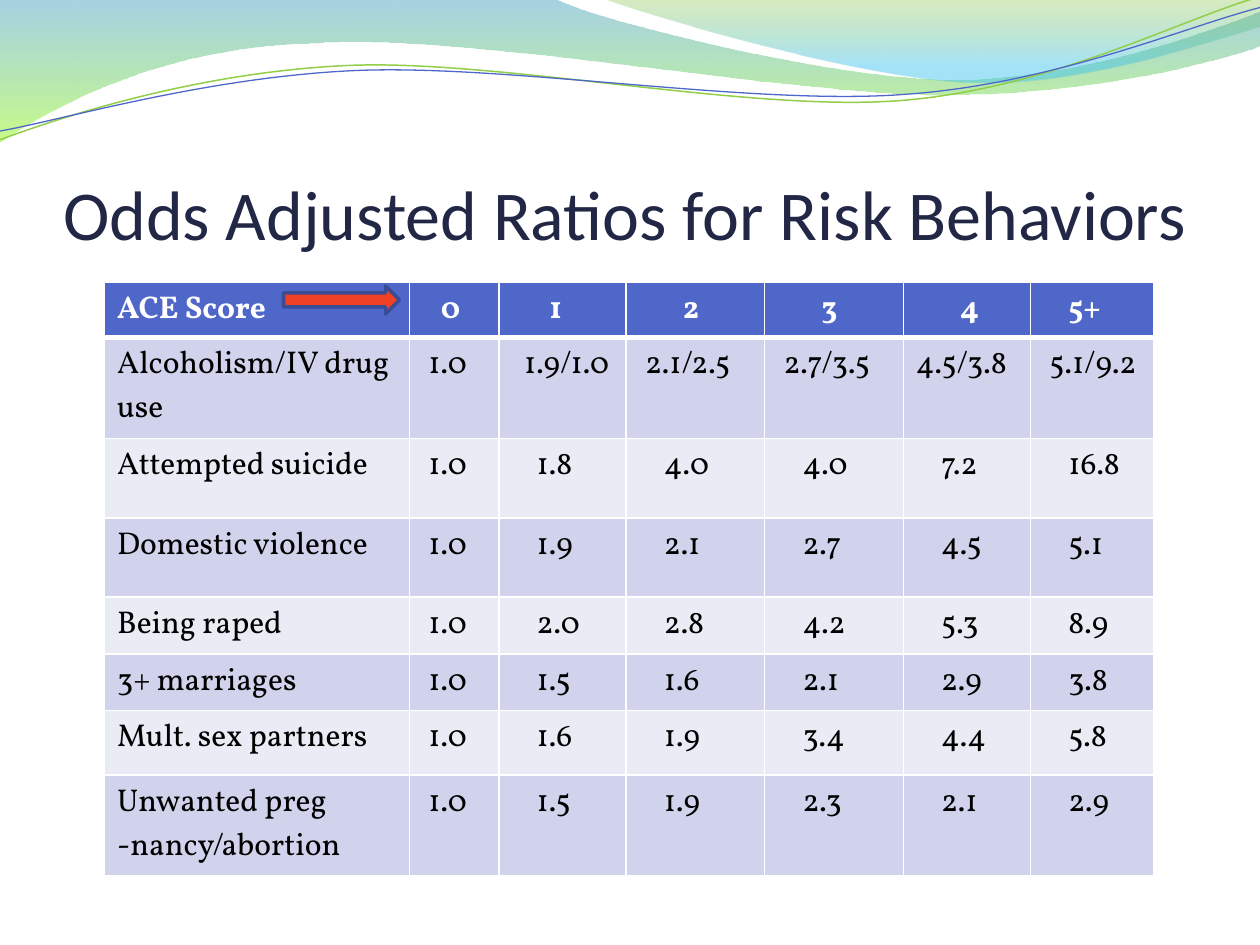
from dataclasses import dataclass

from lxml.etree import SubElement
from pptx import Presentation
from pptx.dml.color import RGBColor
from pptx.enum.shapes import MSO_SHAPE
from pptx.enum.text import MSO_ANCHOR
from pptx.oxml import parse_xml
from pptx.oxml.ns import nsdecls, qn
from pptx.util import Inches, Pt


@dataclass(frozen=True)
class Theme:
    title_font: str = "Calibri"
    table_font: str = "Vollkorn"
    title_size: int = 40
    table_size: int = 18
    title: str = "212745"
    body: str = "000000"
    white: str = "FFFFFF"
    blue: str = "4E67C8"
    green: str = "93CE48"
    odd_row: str = "D0D3EB"
    even_row: str = "E9EBF5"
    arrow: str = "F14124"
    arrow_line: str = "3A4C94"


THEME = Theme()

# Each outline is a list of knots: two values for a line, six for a curve.
# Each gradient stop is position, colour, opacity in percent.
WAVES = [
    ([(0, 0), (4.4, -0.01), (4.76, 0.17, 6.64, 0.63, 7.58, 0.63),
      (8.53, 0.63, 9.58, 0.26, 10, 0.09), (10.01, 0.36),
      (9.83, 0.44, 8.7, 0.76, 7.46, 0.75), (6.22, 0.75, 3.82, 0.28, 2.57, 0.34),
      (1.29, 0.36, 0.46, 0.83, -0.01, 1.13)],
     [(0, "3B9CBF", 45), (1, "9CFA24", 55)]),
    ([(4.79, -0.01), (5.09, 0.11, 6.82, 0.62, 7.69, 0.65),
      (8.56, 0.69, 9.61, 0.32, 10, 0.21), (10, 0)],
     [(0, "7EBE2C", 30), (0.8, "39C1F1", 45)]),
]
RIBBONS = [
    ([(0, 1.11), (0.48, 0.93, 1.58, 0.57, 2.77, 0.52),
      (3.95, 0.47, 5.93, 0.89, 7.13, 0.8), (8.33, 0.71, 9.38, 0.15, 9.98, -0.02)],
     THEME.green, 0.85),
    ([(0, 1.04), (0.47, 0.96, 1.64, 0.61, 2.83, 0.56),
      (4.03, 0.51, 5.97, 0.84, 7.17, 0.75), (8.36, 0.67, 9.41, 0.21, 10, 0.06)],
     THEME.blue, 0.75),
]

COLUMN_WIDTHS = [2.42, 0.71, 1.01, 1.1, 1.1, 1.01, 0.98]
ROW_HEIGHTS = [0.44, 0.8, 0.63, 0.63, 0.45, 0.45, 0.51, 0.8]
ROWS = [
    ["ACE Score", "0", "1", "2", "3", "4", "5+"],
    ["Alcoholism/IV drug use", "1.0", "1.9/1.0", "2.1/2.5", "2.7/3.5", "4.5/3.8", "5.1/9.2"],
    ["Attempted suicide", "1.0", "1.8", "4.0", "4.0", "7.2", "16.8"],
    ["Domestic violence", "1.0", "1.9", "2.1", "2.7", "4.5", "5.1"],
    ["Being raped", "1.0", "2.0", "2.8", "4.2", "5.3", "8.9"],
    ["3+ marriages", "1.0", "1.5", "1.6", "2.1", "2.9", "3.8"],
    ["Mult. sex partners", "1.0", "1.6", "1.9", "3.4", "4.4", "5.8"],
    ["Unwanted preg -nancy/abortion", "1.0", "1.5", "1.9", "2.3", "2.1", "2.9"],
]
# Left margins in inches: header, paired values, single values
HEADER_MARGINS = [0.1, 0.25, 0.4, 0.45, 0.45, 0.45, 0.3]
PAIR_MARGINS = [0.1, 0.15, 0.2, 0.15, 0.15, 0.1, 0.15]
VALUE_MARGINS = [0.1, 0.15] + [0.3] * 5


def set_values(target, values):
    for name, value in values.items():
        setattr(target, name, value)


def color(code):
    return RGBColor.from_string(code)


def write_text(paragraph, text, font, size, code, bold=False):
    run = paragraph.add_run()
    run.text = text
    set_values(run.font, {"name": font, "size": Pt(size), "bold": bold})
    run.font.color.rgb = color(code)


def add_outline(slide, knots, close):
    ends = [(Inches(knot[-2]), Inches(knot[-1])) for knot in knots]
    builder = slide.shapes.build_freeform(*ends[0], scale=1.0)
    builder.add_line_segments(ends[1:], close=close)
    shape = builder.convert_to_shape()
    shape.shadow.inherit = False
    # Bend the segments that have control points
    segments = list(shape.element.iter(qn("a:lnTo")))
    for segment, knot in zip(segments, knots[1:]):
        if len(knot) == 6:
            points = "".join(
                f'<a:pt x="{Inches(x) - shape.left}" y="{Inches(y) - shape.top}"/>'
                for x, y in zip(knot[::2], knot[1::2]))
            curve = parse_xml(f'<a:cubicBezTo {nsdecls("a")}>{points}</a:cubicBezTo>')
            segment.getparent().replace(segment, curve)
    return shape


def add_wave(slide, knots, stops):
    shape = add_outline(slide, knots, True)
    shape.line.fill.background()
    shape.fill.gradient()
    shape.fill.gradient_angle = 270
    for gradient_stop, (position, code, _) in zip(shape.fill.gradient_stops, stops):
        gradient_stop.position = position
        gradient_stop.color.rgb = color(code)
    # Opacity of each stop
    gradient = shape.element.spPr.find(qn("a:gradFill"))
    for node, (_, _, opacity) in zip(gradient.iter(qn("a:srgbClr")), stops):
        SubElement(node, qn("a:alpha")).set("val", str(opacity * 1000))


def add_ribbon(slide, knots, code, width):
    shape = add_outline(slide, knots, False)
    shape.fill.background()
    shape.line.color.rgb = color(code)
    shape.line.width = Pt(width)


def add_title(slide, text):
    box = slide.shapes.add_textbox(Inches(0.5), Inches(0.92), Inches(9.08), Inches(1.1))
    frame = box.text_frame
    set_values(frame, {"word_wrap": True, "vertical_anchor": MSO_ANCHOR.BOTTOM,
                       "margin_left": 0, "margin_right": 0,
                       "margin_top": Inches(0.05), "margin_bottom": 0})
    write_text(frame.paragraphs[0], text, THEME.title_font, THEME.title_size, THEME.title)


def set_borders(cell, widths):
    properties = cell._tc.get_or_add_tcPr()
    for index, (side, width) in enumerate(widths.items()):
        properties.insert(index, parse_xml(
            f'<a:ln{side} {nsdecls("a")} w="{Pt(width)}"><a:solidFill>'
            f'<a:srgbClr val="{THEME.white}"/></a:solidFill></a:ln{side}>'))


def add_score_table(slide):
    frame = slide.shapes.add_table(
        len(ROWS), len(COLUMN_WIDTHS), Inches(0.83), Inches(2.24),
        Inches(sum(COLUMN_WIDTHS)), Inches(sum(ROW_HEIGHTS)))
    table = frame.table
    for column, width in zip(table.columns, COLUMN_WIDTHS):
        column.width = Inches(width)
    for row_index, (row, height, texts) in enumerate(zip(table.rows, ROW_HEIGHTS, ROWS)):
        row.height = Inches(height)
        header = row_index == 0
        margins = {0: HEADER_MARGINS, 1: PAIR_MARGINS}.get(row_index, VALUE_MARGINS)
        band = THEME.odd_row if row_index % 2 else THEME.even_row
        borders = {"L": 1, "R": 1, "T": 3 if row_index == 1 else 1, "B": 3 if header else 1}
        for cell, text, margin in zip(row.cells, texts, margins):
            cell.margin_left = Inches(margin)
            set_borders(cell, borders)
            cell.fill.solid()
            cell.fill.fore_color.rgb = color(THEME.blue if header else band)
            write_text(cell.text_frame.paragraphs[0], text, THEME.table_font,
                       THEME.table_size, THEME.white if header else THEME.body, header)


def add_score_arrow(slide):
    arrow = slide.shapes.add_shape(
        MSO_SHAPE.RIGHT_ARROW, Inches(2.25), Inches(2.27), Inches(0.92), Inches(0.22))
    arrow.shadow.inherit = False
    arrow.fill.solid()
    arrow.fill.fore_color.rgb = color(THEME.arrow)
    arrow.line.color.rgb = color(THEME.arrow_line)
    arrow.line.width = Pt(2)


def main():
    presentation = Presentation()
    set_values(presentation, {"slide_width": Inches(10), "slide_height": Inches(7.5)})
    slide = presentation.slides.add_slide(presentation.slide_layouts[6])

    # Header decoration
    for wave in WAVES:
        add_wave(slide, *wave)
    for ribbon in RIBBONS:
        add_ribbon(slide, *ribbon)

    # Content
    add_title(slide, "Odds Adjusted Ratios for Risk Behaviors")
    add_score_table(slide)
    add_score_arrow(slide)
    presentation.save("out.pptx")


if __name__ == "__main__":
    main()
